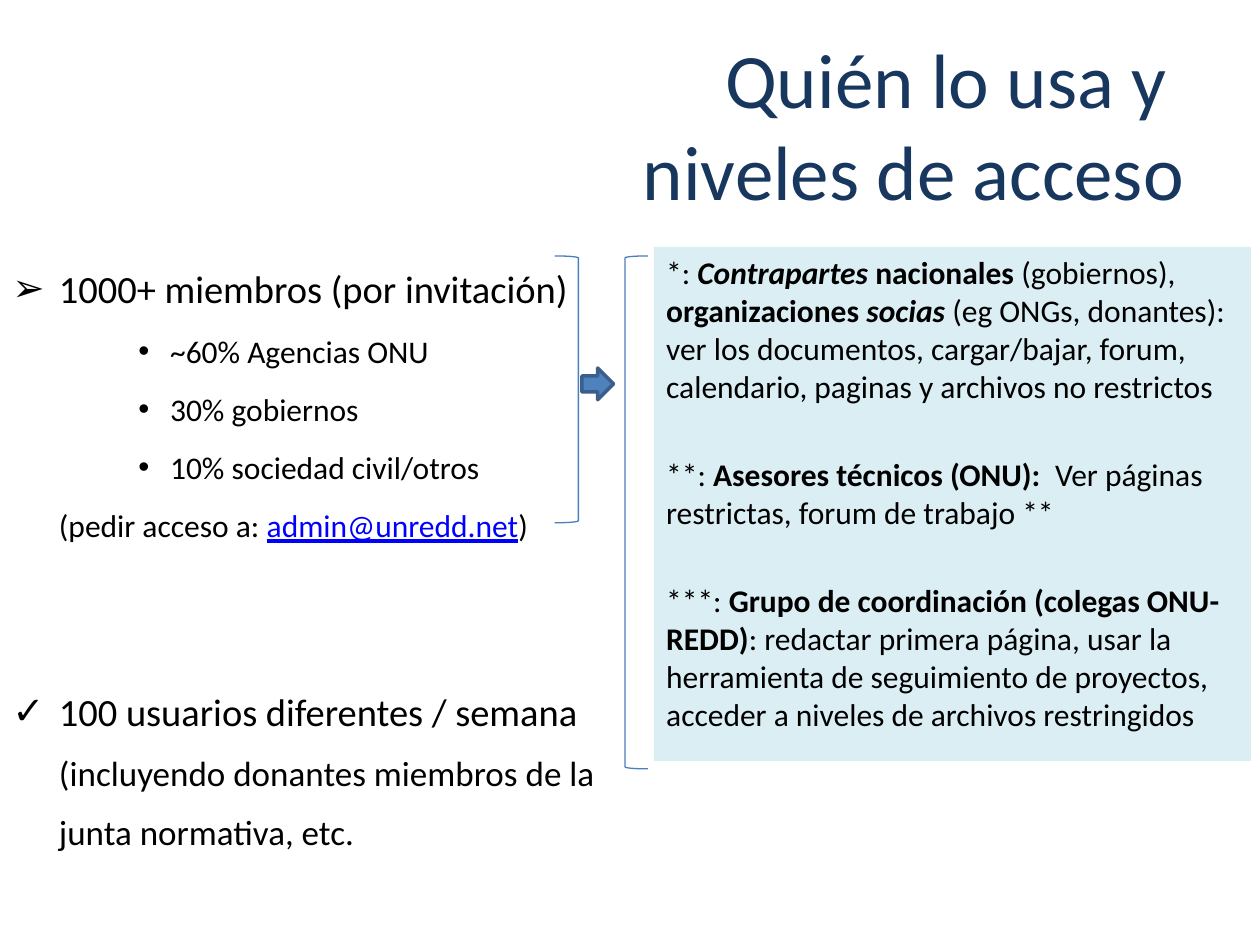
from lxml import etree
from pptx import Presentation
from pptx import util as u
from pptx.dml.color import RGBColor
from pptx.enum import shapes, text
from pptx.oxml.ns import qn

FONT = "Calibri"
NAVY, BLACK, LINK = "17375E", "000000", "0000FF"
PALE, BLUE, ARROW_EDGE, BRACKET = "DBEEF4", "4F81BD", "3A5F8C", "4B7EBC"

TITLE = "Quién lo usa y \vniveles de acceso"

# Styles: letters of "b" bold, "i" italic, "u" underlined link
# Members: bullet, left margin and hanging (cm), space before (pt), runs (text, size, style)
MAIN, SUB = (0.94, 0.94), (3.18, 0.64)
MEMBERS = [
    ("➢", MAIN, 0, [("1000+ miembros (por invitación)", 22, "")]),
    ("•", SUB, 3, [("~60% Agencias ONU", 18, "")]),
    ("•", SUB, 3, [("30% gobiernos", 18, "")]),
    ("•", SUB, 3, [("10% sociedad civil/otros", 18, "")]),
    (None, (0.94, 0), 3, [("(pedir acceso a: ", 18, ""), ("admin@unredd.net", 18, "u"),
                          (")", 18, "")]),
    ("✓", MAIN, 72, [("100 usuarios diferentes / semana ", 22, ""),
                     ("(incluyendo donantes miembros de la junta normativa, etc.", 20, "")]),
]
ACCESS_LEVELS = [
    [("*: ", 18, ""), ("Contrapartes ", 18, "bi"), ("nacionales ", 18, "b"),
     ("(gobiernos), ", 18, ""), ("organizaciones ", 18, "b"), ("socias", 18, "bi"),
     (" (eg ONGs, donantes): ver los documentos, cargar/bajar, forum, calendario, "
      "paginas y archivos no restrictos", 18, "")],
    [("**: ", 18, ""), ("Asesores técnicos (ONU):  ", 18, "b"),
     ("Ver páginas restrictas, forum de trabajo **", 18, "")],
    [("***: ", 18, ""), ("Grupo de coordinación (colegas ONU-REDD)", 18, "b"),
     (": redactar primera página, usar la herramienta de seguimiento de proyectos, "
      "acceder a niveles de archivos restringidos", 18, "")],
]
LEVEL_GAP = 29

# Left, top, width, height in cm
TITLE_BOX = (6.65, 0.91, 17.48, 3.18)
MEMBERS_BOX = (0, 4.85, 12.65, 12.88)
LEVELS_BOX = (13.18, 4.98, 12.04, 10.36)
ARROW_BOX = (11.73, 7.42, 0.64, 0.64)
BRACKETS = [
    (shapes.MSO_SHAPE.RIGHT_BRACKET, (11.18, 5.16, 0.48, 5.38)),
    (shapes.MSO_SHAPE.LEFT_BRACKET, (12.6, 5.16, 0.46, 10.34)),
]


def color(value):
    return RGBColor.from_string(value)


def lengths(box):
    return [u.Cm(value) for value in box]


def add_text_box(slide, box):
    frame = slide.shapes.add_textbox(*lengths(box)).text_frame
    frame.word_wrap = True
    return frame


def add_shape(slide, kind, box, fill=None, line=None, line_width=0.75):
    shape = slide.shapes.add_shape(kind, *lengths(box))
    shape.shadow.inherit = False
    for part, value in ((shape.fill, fill), (shape.line.fill, line)):
        if value:
            part.solid()
            part.fore_color.rgb = color(value)
        else:
            part.background()
    if line:
        shape.line.width = u.Pt(line_width)
    return shape


def style_run(run, size, style="", ink=BLACK):
    font = run.font
    font.name, font.size = FONT, u.Pt(size)
    font.bold, font.italic, font.underline = "b" in style, "i" in style, "u" in style
    font.color.rgb = color(LINK if "u" in style else ink)


def add_paragraph(frame, first, runs, space_before):
    paragraph = frame.paragraphs[0] if first else frame.add_paragraph()
    paragraph.alignment = text.PP_ALIGN.LEFT
    paragraph.space_before = u.Pt(space_before)
    for words, size, style in runs:
        run = paragraph.add_run()
        run.text = words
        style_run(run, size, style)
    return paragraph


def set_bullet(paragraph, bullet, margin, hanging):
    properties = paragraph._p.get_or_add_pPr()
    properties.set("marL", str(u.Cm(margin)))
    properties.set("indent", str(-u.Cm(hanging)))
    if bullet:
        etree.SubElement(properties, qn("a:buFont"), typeface="Arial")
        etree.SubElement(properties, qn("a:buChar"), char=bullet)


def add_title(slide):
    frame = add_text_box(slide, TITLE_BOX)
    frame.vertical_anchor = text.MSO_ANCHOR.MIDDLE
    paragraph = frame.paragraphs[0]
    paragraph.text = TITLE
    paragraph.alignment = text.PP_ALIGN.RIGHT
    for run in paragraph.runs:
        style_run(run, 44, ink=NAVY)


def add_members(slide):
    frame = add_text_box(slide, MEMBERS_BOX)
    for index, (bullet, indents, space_before, runs) in enumerate(MEMBERS):
        paragraph = add_paragraph(frame, index == 0, runs, space_before)
        set_bullet(paragraph, bullet, *indents)
        paragraph.line_spacing = 1.4


def add_access_levels(slide):
    panel = add_shape(slide, shapes.MSO_SHAPE.RECTANGLE, LEVELS_BOX, fill=PALE)
    frame = panel.text_frame
    frame.word_wrap = True
    frame.vertical_anchor = text.MSO_ANCHOR.TOP
    for index, runs in enumerate(ACCESS_LEVELS):
        add_paragraph(frame, index == 0, runs, LEVEL_GAP if index else 0)


def main():
    presentation = Presentation()
    presentation.slide_width, presentation.slide_height = u.Cm(25.4), u.Cm(19.05)
    slide = presentation.slides.add_slide(presentation.slide_layouts[6])
    add_title(slide)
    add_members(slide)
    add_access_levels(slide)
    add_shape(slide, shapes.MSO_SHAPE.RIGHT_ARROW, ARROW_BOX, BLUE, ARROW_EDGE, 2)
    for kind, box in BRACKETS:
        add_shape(slide, kind, box, line=BRACKET)
    presentation.save("out.pptx")


if __name__ == "__main__":
    main()
